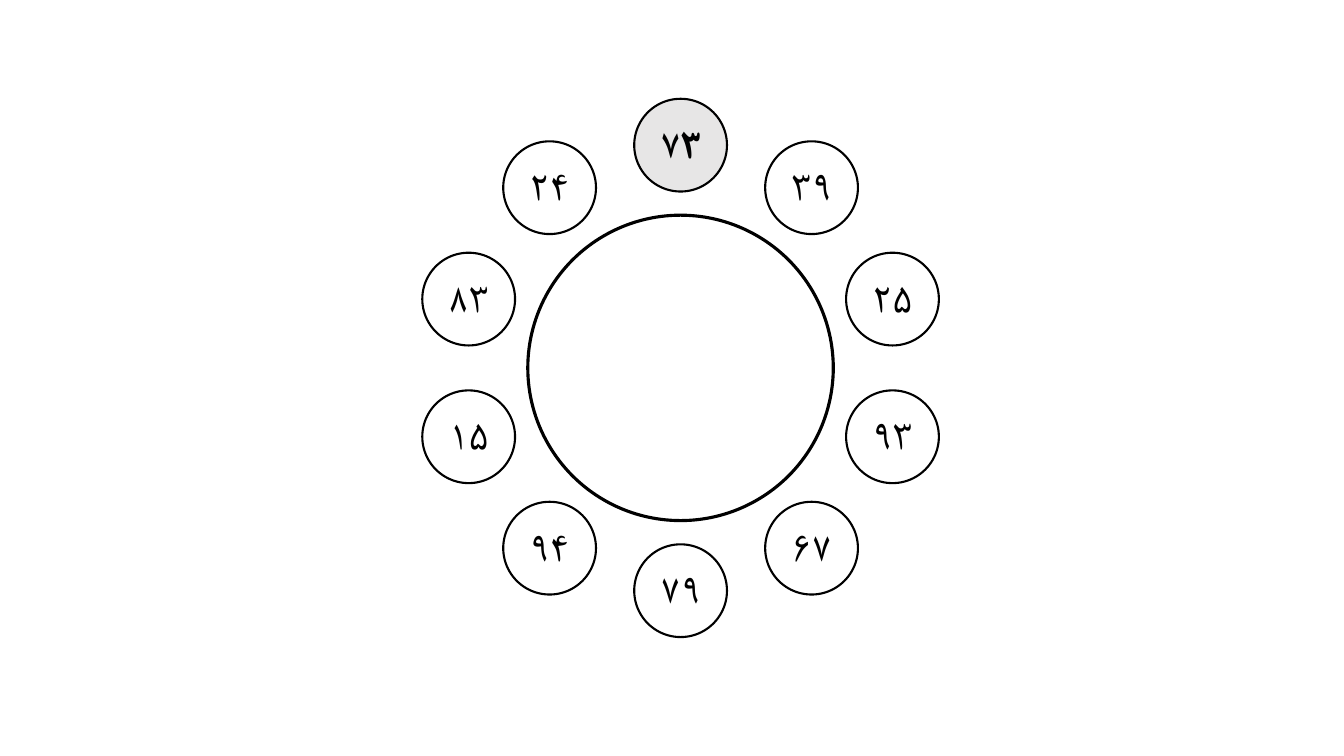
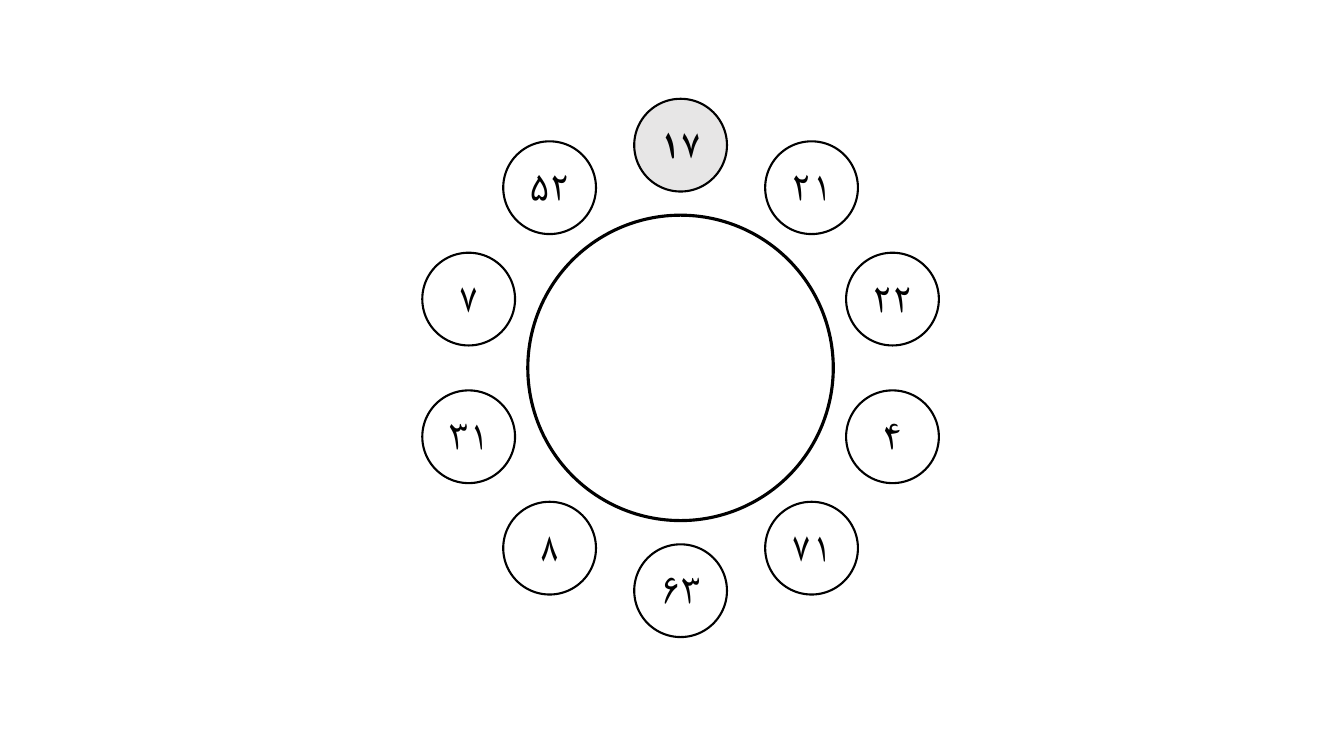
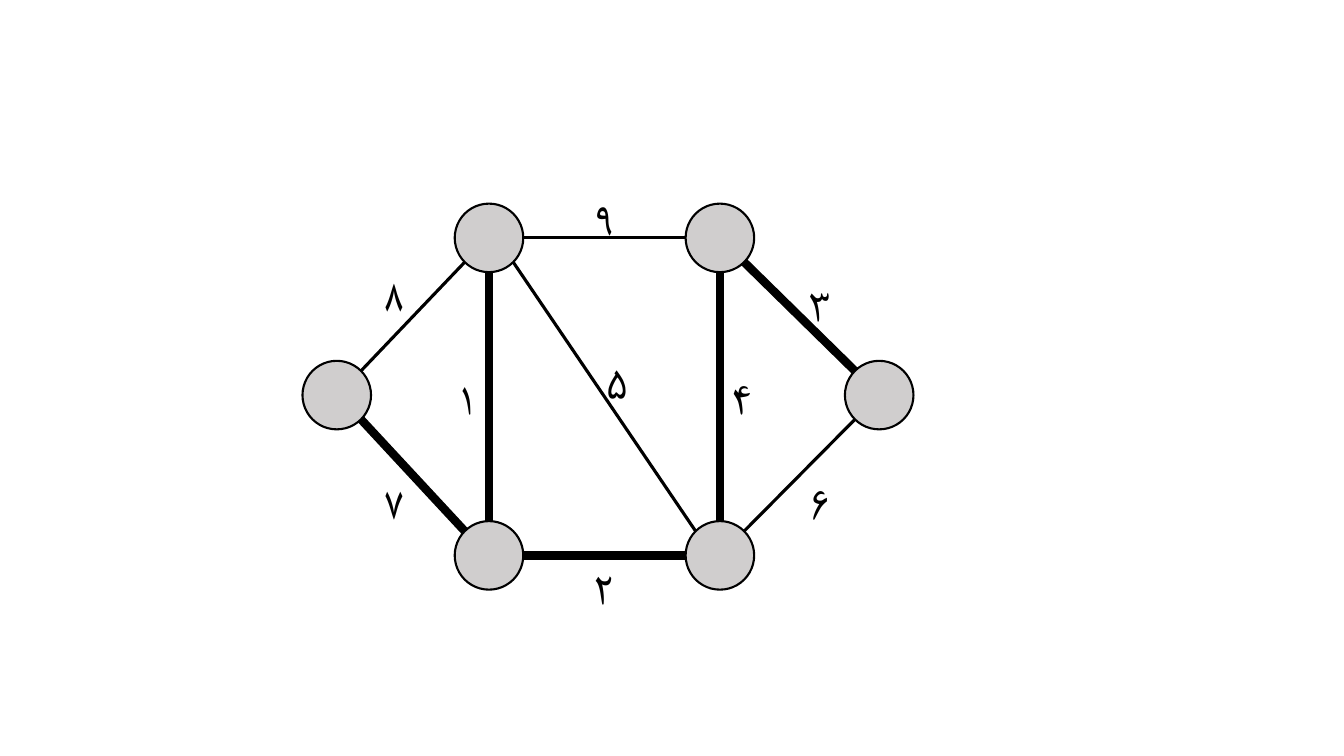
import math

import lxml.etree
import pptx
import pptx.dml.color
import pptx.enum.shapes
import pptx.enum.text
import pptx.oxml.ns
import pptx.util

Inches, Pt = pptx.util.Inches, pptx.util.Pt
qn = pptx.oxml.ns.qn

# Shared style
FONT = "Roboto"
BLACK, WHITE, PALE, GREY = "000000", "FFFFFF", "E7E6E6", "D0CECE"

# Rings: numbers run clockwise, the highlighted one is at the top
RINGS = [
    ["۷۳", "۳۹", "۲۵", "۹۳", "۶۷", "۷۹", "۹۴", "۱۵", "۸۳", "۲۴"],
    ["۱۷", "۲۱", "۲۲", "۴", "۷۱", "۶۳", "۸", "۳۱", "۷", "۵۲"],
]
RING_X, RING_Y, RING_RADIUS = 6.75, 3.65, 2.21
HUB_SIZE, NUMBER_SIZE = 3.03, 0.92

# Weighted graph: node centres, then edges as
# (start, end, weight, in the tree, label left, label top)
NODES = {
    "left": (3.34, 3.92), "right": (8.72, 3.92),
    "top_left": (4.85, 2.36), "top_right": (7.14, 2.36),
    "bottom_left": (4.85, 5.51), "bottom_right": (7.14, 5.51),
}
EDGES = [
    ("top_left", "left", "۸", False, 3.69, 2.6),
    ("left", "bottom_left", "۷", True, 3.69, 4.66),
    ("top_left", "bottom_left", "۱", True, 4.41, 3.62),
    ("top_right", "bottom_right", "۴", True, 7.14, 3.62),
    ("top_left", "top_right", "۹", False, 5.77, 1.84),
    ("bottom_left", "bottom_right", "۲", True, 5.77, 5.5),
    ("top_left", "bottom_right", "۵", False, 5.9, 3.46),
    ("top_right", "right", "۳", True, 7.91, 2.7),
    ("right", "bottom_right", "۶", False, 7.91, 4.66),
]
NODE_SIZE = 0.68
LABEL_WIDTH, LABEL_HEIGHT = 0.44, 0.64


def color(value):
    return pptx.dml.color.RGBColor.from_string(value)


def write(tf, text, size, bold=False):
    p = tf.paragraphs[0]
    p.add_run().text = text
    p.alignment = pptx.enum.text.PP_ALIGN.CENTER
    p.font.name, p.font.size, p.font.bold = FONT, Pt(size), bold
    p.font.color.rgb = color(BLACK)
    # Persian digits use the complex-script font
    props = p._p.pPr.find(qn("a:defRPr"))
    lxml.etree.SubElement(props, qn("a:cs")).set("typeface", FONT)
    return p


def add_circle(s, x, y, size, fill, width):
    """Circle centred on x, y."""
    sp = s.shapes.add_shape(
        pptx.enum.shapes.MSO_SHAPE.OVAL,
        Inches(x - size / 2), Inches(y - size / 2), Inches(size), Inches(size))
    sp.shadow.inherit = False
    sp.fill.solid()
    sp.fill.fore_color.rgb = color(fill)
    sp.line.color.rgb = color(BLACK)
    sp.line.width = Pt(width)
    return sp


def add_ring(s, numbers):
    add_circle(s, RING_X, RING_Y, HUB_SIZE, WHITE, 2.25)
    for i, number in enumerate(numbers):
        angle = 2 * math.pi * i / len(numbers)
        first = i == 0
        sp = add_circle(s, RING_X + RING_RADIUS * math.sin(angle),
                        RING_Y - RING_RADIUS * math.cos(angle),
                        NUMBER_SIZE, PALE if first else WHITE, 1.5)
        tf = sp.text_frame
        tf.margin_left = tf.margin_right = Inches(0.04)
        tf.margin_top = tf.margin_bottom = Inches(0.04)
        tf.vertical_anchor = pptx.enum.text.MSO_ANCHOR.MIDDLE
        write(tf, number, 29, first).line_spacing = 0.9


def sign(value):
    return (value > 0) - (value < 0)


def add_edge(s, start, end, width):
    """Line between the nearest of the eight compass points of two nodes."""
    (x1, y1), (x2, y2) = start, end
    dx, dy = sign(x2 - x1), sign(y2 - y1)
    reach = NODE_SIZE / 2 / math.hypot(dx, dy)
    line = s.shapes.add_connector(
        pptx.enum.shapes.MSO_CONNECTOR.STRAIGHT,
        Inches(x1 + dx * reach), Inches(y1 + dy * reach),
        Inches(x2 - dx * reach), Inches(y2 - dy * reach))
    line.line.color.rgb = color(BLACK)
    line.line.width = Pt(width)
    lxml.etree.SubElement(line._element.spPr, qn("a:effectLst"))


def add_graph(s):
    for x, y in NODES.values():
        add_circle(s, x, y, NODE_SIZE, GREY, 1.5)
    for start, end, _, in_tree, _, _ in EDGES:
        add_edge(s, NODES[start], NODES[end], 6 if in_tree else 2.25)
    for _, _, weight, _, left, top in EDGES:
        label = s.shapes.add_textbox(Inches(left), Inches(top),
                                     Inches(LABEL_WIDTH), Inches(LABEL_HEIGHT))
        label.text_frame.word_wrap = False
        write(label.text_frame, weight, 32)


def main():
    prs = pptx.Presentation()
    prs.slide_width, prs.slide_height = Inches(13.33), Inches(7.5)
    blank = prs.slide_layouts[6]
    for numbers in RINGS:
        add_ring(prs.slides.add_slide(blank), numbers)
    add_graph(prs.slides.add_slide(blank))
    prs.save("out.pptx")


if __name__ == "__main__":
    main()
